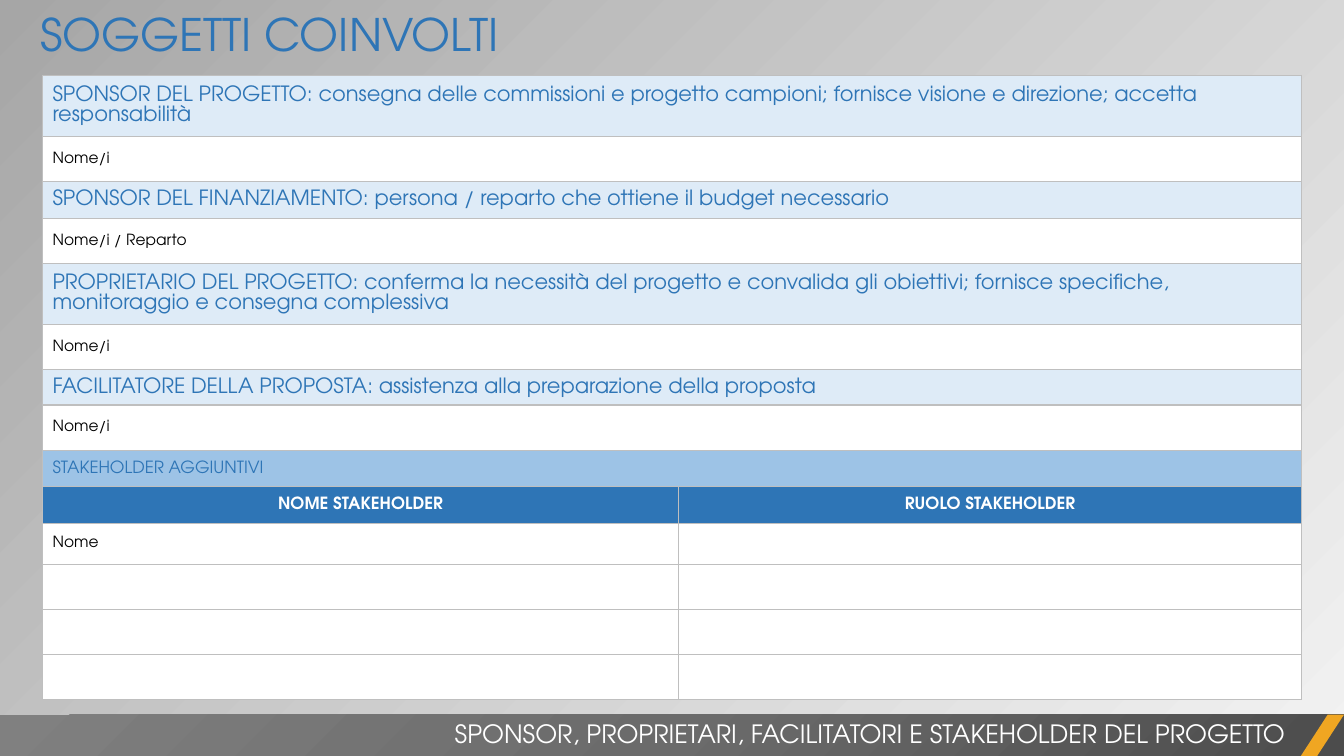
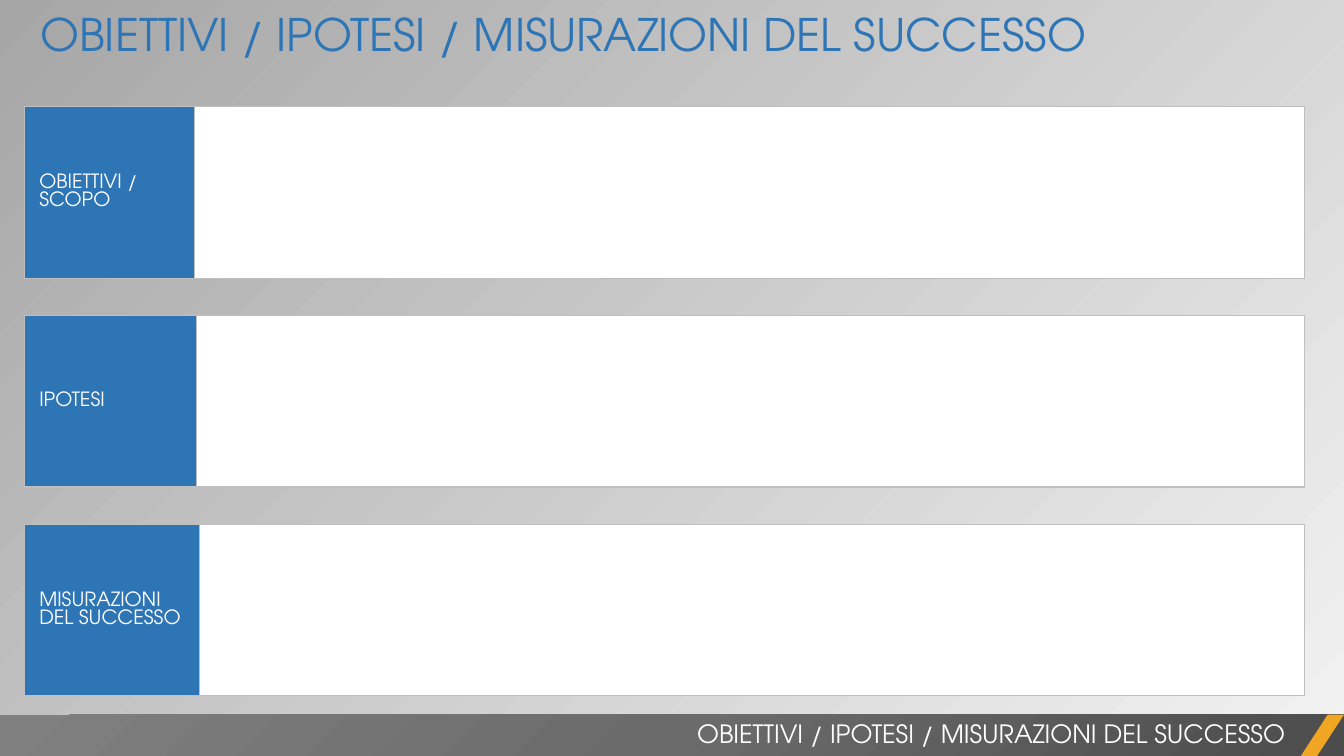
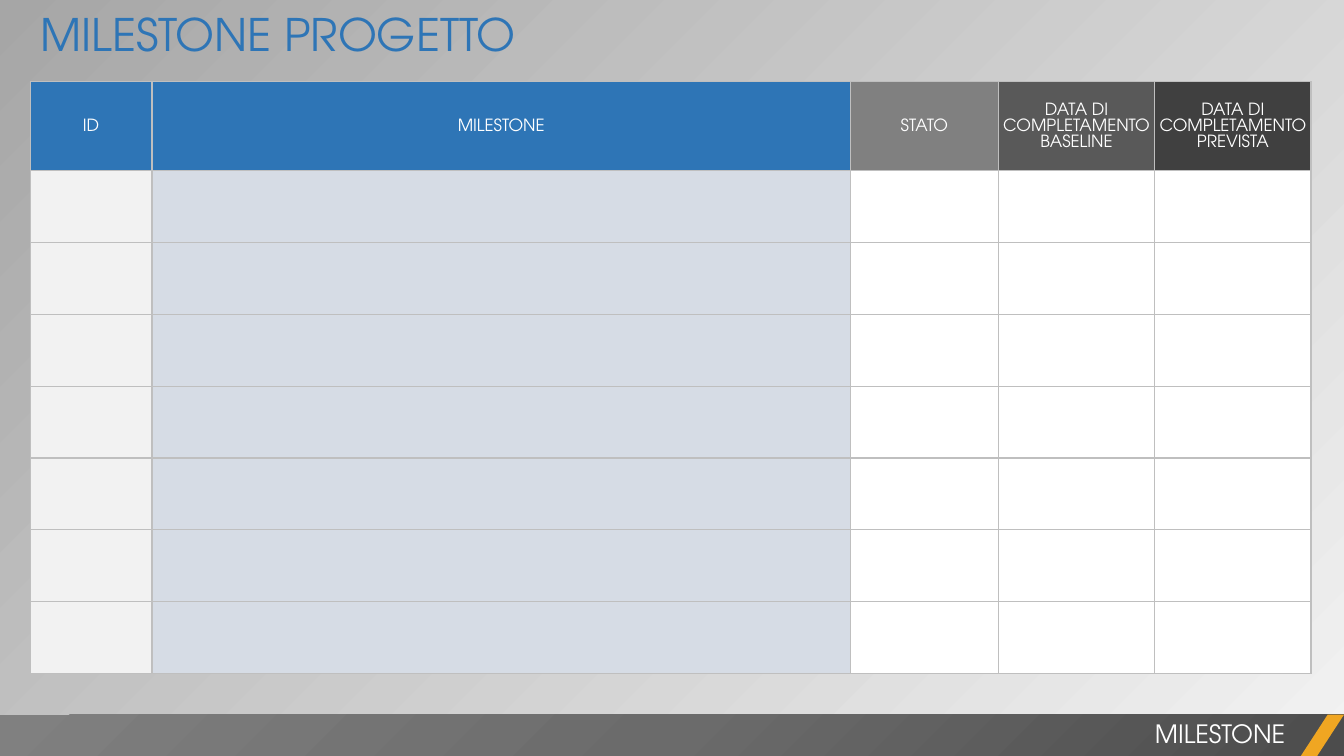
from pptx import Presentation
from pptx import util as u
from pptx.dml.color import RGBColor
from pptx.enum import shapes, text
from pptx.oxml import parse_xml
from pptx.oxml.ns import nsdecls, qn

Cm = u.Cm
BLUE = RGBColor(0x2E, 0x75, 0xB6)
MID_BLUE = RGBColor(0x9D, 0xC3, 0xE6)
PALE_BLUE = RGBColor(0xDE, 0xEB, 0xF7)
BLUE_GRAY = RGBColor(0xD6, 0xDC, 0xE5)
WHITE = RGBColor(0xFF, 0xFF, 0xFF)
BLACK = RGBColor(0, 0, 0)
LIGHT_GRAY = RGBColor(0xF2, 0xF2, 0xF2)
BACK_GRAY = RGBColor(0xA6, 0xA6, 0xA6)
BORDER = RGBColor(0xBF, 0xBF, 0xBF)
GRAY = RGBColor(0x80, 0x80, 0x80)
STEEL = RGBColor(0x6B, 0x6B, 0x6B)
DARK_GRAY = RGBColor(0x59, 0x59, 0x59)
BAND_GRAY = RGBColor(0x4C, 0x4C, 0x4C)
CHARCOAL = RGBColor(0x40, 0x40, 0x40)
ORANGE = RGBColor(0xF0, 0xA6, 0x22)
FONT = "TeX Gyre Adventor"
LEFT, CENTER, RIGHT = text.PP_ALIGN.LEFT, text.PP_ALIGN.CENTER, text.PP_ALIGN.RIGHT
MIDDLE = text.MSO_ANCHOR.MIDDLE
WIDTH, HEIGHT = 33.87, 19.05
BAND_TOP, BAND_HEIGHT = 18.01, 1.06


def write(tf, words, size=12, color=WHITE, bold=False, align=LEFT):
    p = tf.paragraphs[0]
    p.alignment = align
    r = p.add_run()
    r.text = words
    r.font.name = FONT
    r.font.size = u.Pt(size)
    r.font.bold = bold
    r.font.color.rgb = color


def set_gradient(fill, element, stops, shade):
    fill.gradient()
    old = element.find(".//" + qn("a:gradFill"))
    marks = ""
    for pos, color, alpha in stops:
        marks += (f'<a:gs pos="{pos * 1000}"><a:srgbClr val="{color}">'
                  f'<a:alpha val="{alpha * 1000}"/></a:srgbClr></a:gs>')
    new = parse_xml(f'<a:gradFill {nsdecls("a")} rotWithShape="1">'
                    f'<a:gsLst>{marks}</a:gsLst>{shade}</a:gradFill>')
    old.getparent().replace(old, new)


class Deck:
    def __init__(self):
        self.prs = Presentation()
        self.prs.slide_width = Cm(WIDTH)
        self.prs.slide_height = Cm(HEIGHT)
        self.s = None

    def new_slide(self, title, width):
        self.s = self.prs.slides.add_slide(self.prs.slide_layouts[5])
        set_gradient(self.s.background.fill, self.s.element,
                     [(0, LIGHT_GRAY, 40), (100, BACK_GRAY, 100)],
                     '<a:lin ang="13500000" scaled="0"/>')
        sp = self.s.shapes.title
        sp.left, sp.top, sp.width, sp.height = Cm(0.76), Cm(0.03), Cm(width), Cm(1.63)
        tf = sp.text_frame
        tf.vertical_anchor = text.MSO_ANCHOR.TOP
        tf.auto_size = text.MSO_AUTO_SIZE.NONE
        tf.word_wrap = True
        write(tf, title, size=32, color=BLUE)

    def shape(self, kind, left, width):
        sp = self.s.shapes.add_shape(kind, Cm(left), Cm(BAND_TOP), Cm(width), Cm(BAND_HEIGHT))
        sp.shadow.inherit = False
        sp.line.fill.background()
        return sp

    def footer(self, words, left):
        band = self.shape(shapes.MSO_SHAPE.RECTANGLE, 0, WIDTH)
        set_gradient(band.fill, band.element,
                     [(0, BAND_GRAY, 100), (50, STEEL, 100), (100, GRAY, 100)],
                     '<a:path path="circle"><a:fillToRect l="100000" t="100000"/></a:path>')
        slash = self.shape(shapes.MSO_SHAPE.PARALLELOGRAM, 32.77, 1.1)
        slash.adjustments[0] = 0.65
        slash.fill.solid()
        slash.fill.fore_color.rgb = ORANGE
        box = self.s.shapes.add_textbox(Cm(left), Cm(17.98), Cm(32.64 - left), Cm(1.02))
        box.text_frame.word_wrap = True
        write(box.text_frame, words, size=18, align=RIGHT)

    def table(self, left, top, cols, heights, rows, margins=None):
        frame = self.s.shapes.add_table(len(rows), len(cols), Cm(left), Cm(top),
                                        Cm(sum(cols)), Cm(sum(heights)))
        t = frame.table
        t.first_row = t.horz_banding = False
        for col, width in zip(t.columns, cols):
            col.width = Cm(width)
        for i, (height, row) in enumerate(zip(heights, rows)):
            t.rows[i].height = Cm(height)
            for j in range(len(cols)):
                words, fill, style = row[min(j, len(row) - 1)]
                self.cell(t.cell(i, j), words if j < len(row) else "", fill, style, margins)
            if len(row) < len(cols):
                t.cell(i, 0).merge(t.cell(i, len(cols) - 1))

    def cell(self, c, words, fill, style, margins):
        c.fill.solid()
        c.fill.fore_color.rgb = fill
        c.vertical_anchor = MIDDLE
        if margins and words:
            c.margin_left, c.margin_top, c.margin_right, c.margin_bottom = map(Cm, margins)
        if words:
            write(c.text_frame, words, **style)
        for i, side in enumerate("LRTB"):
            c._tc.tcPr.insert(i, parse_xml(
                f'<a:ln{side} {nsdecls("a")} w="12700"><a:solidFill>'
                f'<a:srgbClr val="{BORDER}"/></a:solidFill></a:ln{side}>'))


def stakeholders(deck):
    deck.new_slide("SOGGETTI COINVOLTI", 26.87)
    name = dict(size=11, color=BLACK)
    roles = [
        ("SPONSOR DEL PROGETTO: consegna delle commissioni e progetto campioni; "
         "fornisce visione e direzione; accetta responsabilità", "Nome/i", 1.54),
        ("SPONSOR DEL FINANZIAMENTO: persona / reparto che ottiene il budget necessario",
         "Nome/i / Reparto", 0.92),
        ("PROPRIETARIO DEL PROGETTO: conferma la necessità del progetto e convalida gli "
         "obiettivi; fornisce specifiche, monitoraggio e consegna complessiva", "Nome/i", 1.54),
        ("FACILITATORE DELLA PROPOSTA: assistenza alla preparazione della proposta",
         "Nome/i", 0.89),
    ]
    rows, heights = [], []
    for role, names, height in roles:
        rows += [[(role, PALE_BLUE, dict(size=15, color=BLUE))], [(names, WHITE, name)]]
        heights += [height, 1.14]
    head = dict(bold=True, align=CENTER)
    empty = ("", WHITE, {})
    rows += [[("STAKEHOLDER AGGIUNTIVI", MID_BLUE, dict(color=BLUE))],
             [("NOME STAKEHOLDER", BLUE, head), ("RUOLO STAKEHOLDER", BLUE, head)],
             [("Nome", WHITE, name), empty]] + [[empty, empty]] * 3
    heights += [0.92, 0.92, 0.89] + [1.14] * 3
    deck.table(1.07, 1.9, [16.03, 15.7], heights, rows)
    deck.footer("SPONSOR, PROPRIETARI, FACILITATORI E STAKEHOLDER DEL PROGETTO", 0.76)


def goals(deck):
    title = "OBIETTIVI / IPOTESI / MISURAZIONI DEL SUCCESSO"
    deck.new_slide(title, 32.82)
    labels = [("OBIETTIVI / SCOPO", 4.29), ("IPOTESI", 4.34), ("MISURAZIONI DEL SUCCESSO", 4.42)]
    for i, (label, width) in enumerate(labels):
        deck.table(0.61, 2.69 + i * 5.26, [width, 32.26 - width], [4.32],
                   [[(label, BLUE, dict(size=14)), ("", WHITE, {})]], margins=[0.38] * 4)
    deck.footer(title, 2.9)


def milestones(deck):
    deck.new_slide("MILESTONE PROGETTO", 32.49)
    heads = [("ID", BLUE), ("MILESTONE", BLUE), ("STATO", GRAY),
             ("DATA DI COMPLETAMENTO BASELINE", DARK_GRAY),
             ("DATA DI COMPLETAMENTO PREVISTA", CHARCOAL)]
    body = [("", fill, {}) for fill in (LIGHT_GRAY, BLUE_GRAY, WHITE, WHITE, WHITE)]
    rows = [[(words, fill, dict(align=CENTER)) for words, fill in heads]] + [body] * 7
    deck.table(0.76, 2.06, [3.07, 17.6, 3.73, 3.94, 3.94], [2.24] + [1.81] * 7, rows,
               margins=[0.03, 0.03, 0.03, 0])
    deck.footer("MILESTONE", 13.34)


def main():
    deck = Deck()
    for build in (stakeholders, goals, milestones):
        build(deck)
    deck.prs.save("out.pptx")


if __name__ == "__main__":
    main()
